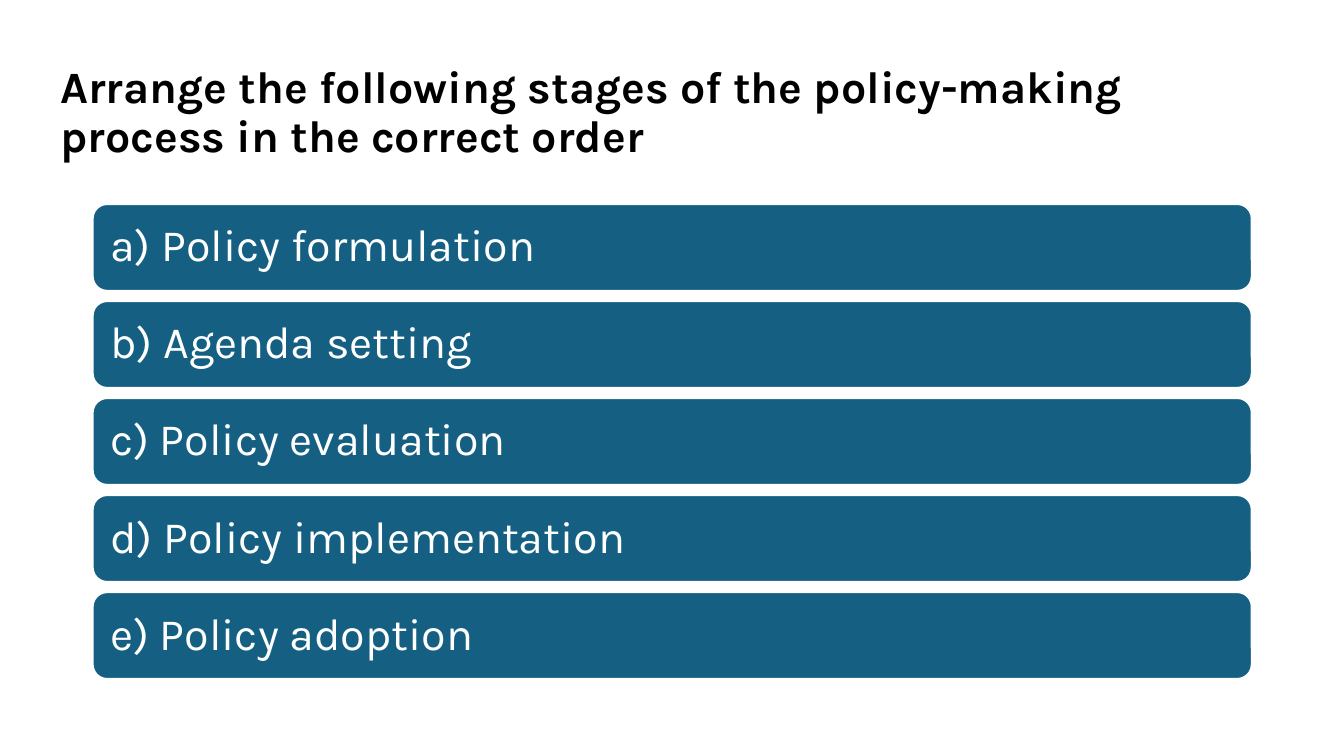
import pptx
import pptx.dml.color
import pptx.enum.shapes
import pptx.enum.text
import pptx.util

FONT = "Karla"
TITLE = "Arrange the following stages of the policy-making process in the correct order"
STAGES = [
    "a) Policy formulation",
    "b) Agenda setting",
    "c) Policy evaluation",
    "d) Policy implementation",
    "e) Policy adoption",
]
BAR_LEFT, BAR_TOP, BAR_WIDTH, BAR_HEIGHT = 66.2, 145.7, 828, 62.1
BAR_PITCH = 69.3


def color(hex_value):
    return pptx.dml.color.RGBColor.from_string(hex_value)


def write_text(shape, text, hex_value, margins, bold=False):
    """Put one left-aligned, vertically centred paragraph in a shape."""
    frame = shape.text_frame
    frame.word_wrap = True
    frame.vertical_anchor = pptx.enum.text.MSO_ANCHOR.MIDDLE
    left, top, right, bottom = (pptx.util.Pt(margin) for margin in margins)
    frame.margin_left, frame.margin_top = left, top
    frame.margin_right, frame.margin_bottom = right, bottom
    frame.text = text
    paragraph = frame.paragraphs[0]
    paragraph.alignment = pptx.enum.text.PP_ALIGN.LEFT
    paragraph.line_spacing = 0.9
    font = paragraph.runs[0].font
    font.name = FONT
    font.size = pptx.util.Pt(32)
    font.bold = bold
    font.color.rgb = color(hex_value)


def add_title(slide, text):
    box = slide.shapes.add_textbox(
        pptx.util.Pt(36), pptx.util.Pt(28.8), pptx.util.Pt(899.3), pptx.util.Pt(104.4))
    # The wider right margin keeps the second line starting at "process"
    write_text(box, text, "000000", (7.2, 3.6, 14.4, 3.6), bold=True)


def add_stage_bar(slide, top, text):
    bar = slide.shapes.add_shape(
        pptx.enum.shapes.MSO_SHAPE.ROUNDED_RECTANGLE,
        pptx.util.Pt(BAR_LEFT), pptx.util.Pt(top),
        pptx.util.Pt(BAR_WIDTH), pptx.util.Pt(BAR_HEIGHT))
    bar.shadow.inherit = False
    bar.fill.solid()
    bar.fill.fore_color.rgb = color("156082")
    bar.line.color.rgb = color("FFFFFF")
    bar.line.width = pptx.util.Pt(1.5)
    write_text(bar, text, "FFFFFF", (9.6, 9.6, 9.6, 9.6))


def main():
    presentation = pptx.Presentation()
    presentation.slide_width = pptx.util.Pt(960)
    presentation.slide_height = pptx.util.Pt(540)
    slide = presentation.slides.add_slide(presentation.slide_layouts[6])

    # Question
    add_title(slide, TITLE)

    # Stages to be put in order
    for index, stage in enumerate(STAGES):
        add_stage_bar(slide, BAR_TOP + index * BAR_PITCH, stage)

    presentation.save("out.pptx")


if __name__ == "__main__":
    main()
